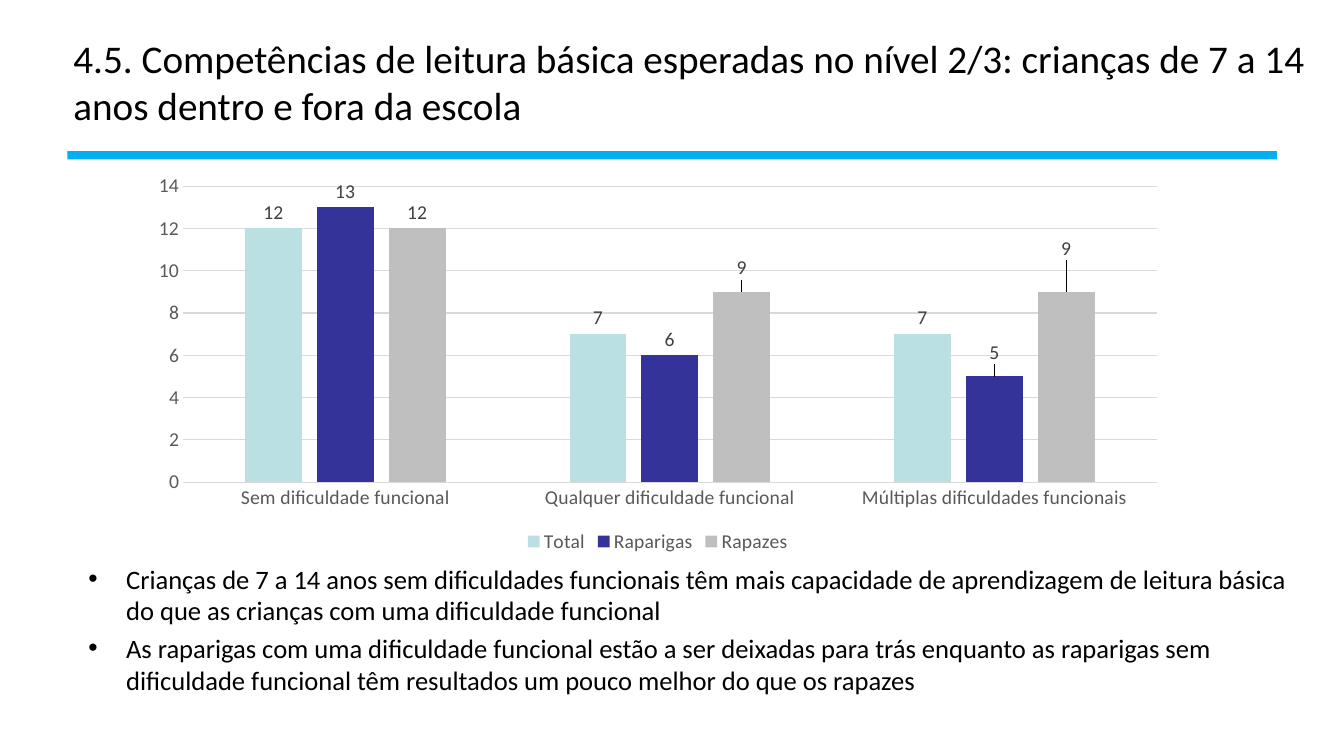
from lxml import etree
from pptx import Presentation
from pptx.chart.data import CategoryChartData
from pptx.dml.color import RGBColor
from pptx.enum.chart import XL_CHART_TYPE as ChartType
from pptx.enum.chart import XL_LABEL_POSITION as LabelPosition
from pptx.enum.chart import XL_LEGEND_POSITION as LegendPosition
from pptx.enum.chart import XL_TICK_MARK as TickMark
from pptx.enum.shapes import MSO_SHAPE as Shape
from pptx.enum.text import MSO_ANCHOR as Anchor
from pptx.oxml.ns import qn
from pptx.util import Cm, Pt

FONT = "Calibri"
COLOURS = {
    "text": "000000",
    "rule": "00B0F0",
    "axis": "595959",
    "grid": "D9D9D9",
    "label": "404040",
    "Total": "BBE0E3",
    "Raparigas": "333399",
    "Rapazes": "BFBFBF",
}
TITLE = ("4.5. Competências de leitura básica esperadas no nível 2/3: "
         "crianças de 7 a 14 anos dentro e fora da escola")
FINDINGS = [
    "Crianças de 7 a 14 anos sem dificuldades funcionais têm mais capacidade de "
    "aprendizagem de leitura básica do que as crianças com uma dificuldade funcional",
    "As raparigas com uma dificuldade funcional estão a ser deixadas para trás enquanto "
    "as raparigas sem dificuldade funcional têm resultados um pouco melhor do que os rapazes",
]
CATEGORIES = ["Sem dificuldade funcional", "Qualquer dificuldade funcional",
              "Múltiplas dificuldades funcionais"]
SCORES = {"Total": (12, 7, 7), "Raparigas": (13, 6, 5), "Rapazes": (12, 9, 9)}
# Label shifts as shares of the chart size: (series, point) -> (x, y)
LABEL_SHIFTS = {
    ("Raparigas", 2): (0.0, -0.02),
    ("Rapazes", 1): (0.0, -0.02),
    ("Rapazes", 2): (0.0, -0.07),
}


def colour(name):
    return RGBColor.from_string(COLOURS[name])


def set_font(font, size, name):
    font.name = FONT
    font.size = Pt(size)
    font.color.rgb = colour(name)


def add_bullet(para, indent):
    properties = para._p.get_or_add_pPr()
    properties.set("marL", str(indent))
    properties.set("indent", str(-indent))
    etree.SubElement(properties, qn("a:buFont")).set("typeface", "Arial")
    etree.SubElement(properties, qn("a:buChar")).set("char", "•")


def add_text(page, texts, left, top, width, height, *, size,
             anchor=Anchor.TOP, bullet_indent=None, gap=0):
    box = page.shapes.add_textbox(left, top, width, height)
    frame = box.text_frame
    frame.word_wrap = True
    frame.vertical_anchor = anchor
    for index, text in enumerate(texts):
        para = frame.add_paragraph() if index else frame.paragraphs[0]
        if bullet_indent:
            add_bullet(para, bullet_indent)
        if index:
            para.space_before = Pt(gap)
        span = para.add_run()
        span.text = text
        set_font(span.font, size, "text")


def add_rule(page, left, top, width, height):
    rule = page.shapes.add_shape(Shape.RECTANGLE, left, top, width, height)
    rule.shadow.inherit = False
    rule.fill.solid()
    rule.fill.fore_color.rgb = colour("rule")
    rule.line.fill.background()


def shift_label(label, x, y):
    """Move one data label away from its default place."""
    set_font(label.font, 14, "label")
    label.position = LabelPosition.OUTSIDE_END
    layout = etree.Element(qn("c:layout"))
    manual = etree.SubElement(layout, qn("c:manualLayout"))
    for axis, value in (("x", x), ("y", y)):
        etree.SubElement(manual, qn(f"c:{axis}")).set("val", str(value))
    label._dLbl.find(qn("c:idx")).addnext(layout)


def style_axis(axis):
    axis.major_tick_mark = TickMark.NONE
    axis.minor_tick_mark = TickMark.NONE
    set_font(axis.tick_labels.font, 14, "axis")


def style_series(series):
    series.format.fill.solid()
    series.format.fill.fore_color.rgb = colour(series.name)
    series.invert_if_negative = False
    labels = series.data_labels
    labels.show_value = True
    labels.position = LabelPosition.OUTSIDE_END
    labels.number_format = "0"
    labels.number_format_is_linked = False
    set_font(labels.font, 14, "label")
    for (name, point), (x, y) in LABEL_SHIFTS.items():
        if name == series.name:
            shift_label(series.points[point].data_label, x, y)


def add_column_chart(page, left, top, width, height):
    data = CategoryChartData()
    data.categories = CATEGORIES
    for name, values in SCORES.items():
        data.add_series(name, values)
    chart = page.shapes.add_chart(
        ChartType.COLUMN_CLUSTERED, left, top, width, height, data).chart
    set_font(chart.font, 10, "text")
    chart.has_title = False

    # Legend
    chart.has_legend = True
    chart.legend.position = LegendPosition.BOTTOM
    chart.legend.include_in_layout = False
    set_font(chart.legend.font, 14, "axis")

    # Axes
    scale = chart.value_axis
    scale.minimum_scale, scale.maximum_scale, scale.major_unit = 0, 14, 2
    scale.format.line.fill.background()
    for axis in (chart.category_axis, scale):
        style_axis(axis)
    for line in (chart.category_axis.format.line, scale.major_gridlines.format.line):
        line.color.rgb = colour("grid")
        line.width = Pt(0.75)

    # Columns
    plot = chart.plots[0]
    plot.gap_width, plot.overlap = 219, -27
    plot.vary_by_categories = False
    for series in plot.series:
        style_series(series)


def main():
    deck = Presentation()
    deck.slide_width, deck.slide_height = Cm(33.87), Cm(19.05)
    page = deck.slides.add_slide(deck.slide_layouts[6])

    # Heading
    add_rule(page, Cm(1.7), Cm(3.81), Cm(30.48), Cm(0.21))
    add_text(page, [TITLE], Cm(1.6), Cm(0.46), Cm(31.93), Cm(3.18),
             size=28, anchor=Anchor.MIDDLE)

    # Findings and chart
    add_text(page, FINDINGS, Cm(1.98), Cm(14.05), Cm(31.4), Cm(3.73),
             size=19, bullet_indent=Cm(0.95), gap=3.8)
    add_column_chart(page, Cm(3.48), Cm(4.19), Cm(26.19), Cm(9.86))

    deck.save("out.pptx")


if __name__ == "__main__":
    main()
